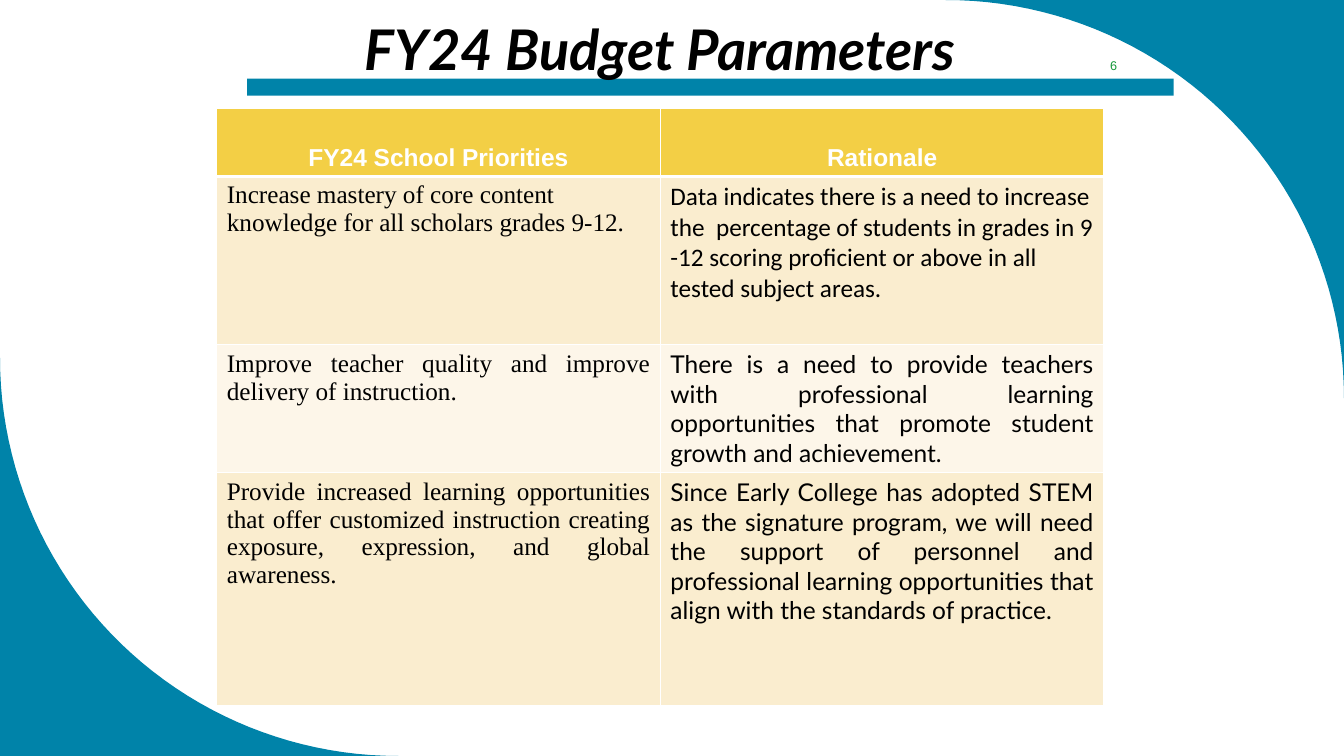
import math

import pptx
import pptx.dml.color
import pptx.enum.shapes
import pptx.enum.text
import pptx.oxml
import pptx.oxml.ns
import pptx.util

Inches = pptx.util.Inches
Pt = pptx.util.Pt
RGBColor = pptx.dml.color.RGBColor
ALIGN = pptx.enum.text.PP_ALIGN
ANCHOR = pptx.enum.text.MSO_ANCHOR

WIDTH, HEIGHT = 13.33, 7.5
TEAL = RGBColor(0x00, 0x83, 0xA9)
GOLD = RGBColor(0xF3, 0xCF, 0x45)
CREAM = RGBColor(0xFA, 0xED, 0xCF)
IVORY = RGBColor(0xFD, 0xF6, 0xE9)
GREEN = RGBColor(0x15, 0x98, 0x39)
BLACK = RGBColor(0, 0, 0)
WHITE = RGBColor(0xFF, 0xFF, 0xFF)

HEADINGS = ("FY24 School Priorities", "Rationale")
# Each row: priority, its alignment, rationale, its font and size
PRIORITIES = (
    ("Increase mastery of core content knowledge for all scholars grades 9-12.",
     ALIGN.LEFT,
     "Data indicates there is a need to increase the  percentage of students in "
     "grades in 9 -12 scoring proficient or above in all tested subject areas.",
     "Calibri", 18),
    ("Improve teacher quality and improve delivery of instruction.",
     ALIGN.JUSTIFY,
     "There is a need to provide teachers with professional learning "
     "opportunities that promote student growth and achievement.",
     "Lato", 17.5),
    ("Provide increased learning opportunities that offer customized instruction "
     "creating exposure, expression, and global awareness.",
     ALIGN.JUSTIFY,
     "Since Early College has adopted STEM as the signature program, we will need "
     "the support of personnel and professional learning opportunities that align "
     "with the standards of practice.",
     "Lato", 17.5),
)
ROW_HEIGHTS = (0.67, 1.67, 1.27, 2.31)


def write_text(frame, text, font="Arial", size=18, color=BLACK, bold=False,
               italic=False, align=ALIGN.LEFT):
    para = frame.paragraphs[0]
    para.alignment = align
    span = para.add_run()
    span.text = text
    span.font.name = font
    span.font.size = Pt(size)
    span.font.color.rgb = color
    span.font.bold = bold
    span.font.italic = italic


def paint(shape, color):
    shape.shadow.inherit = False
    shape.fill.solid()
    shape.fill.fore_color.rgb = color
    shape.line.fill.background()


def add_corner(page, left, top, size, start):
    """Fill the corner outside a quarter circle that begins at start degrees."""
    center_x = left if start == 270 else left + size
    center_y = top + size if start == 270 else top
    angles = [math.radians(start + step) for step in range(0, 91, 2)]
    arc = [(Inches(center_x + size * math.cos(angle)),
            Inches(center_y + size * math.sin(angle))) for angle in angles]
    corner = (left + size, top) if start == 270 else (left, top + size)
    builder = page.shapes.build_freeform(*arc[0])
    builder.add_line_segments(arc[1:] + [tuple(map(Inches, corner))], close=True)
    paint(builder.convert_to_shape(), TEAL)


def add_heading(page, left, top, width, height):
    # Rule below the title
    rule = page.shapes.add_shape(pptx.enum.shapes.MSO_SHAPE.RECTANGLE, Inches(2.45),
                                 Inches(0.78), Inches(9.19), Inches(0.17))
    paint(rule, TEAL)
    # Title, brought in front of the rule
    title = page.shapes.title
    title.left, title.top = Inches(left), Inches(top)
    title.width, title.height = Inches(width), Inches(height)
    rule._element.addnext(title._element)
    title.text_frame.vertical_anchor = ANCHOR.TOP
    title.text_frame.auto_size = pptx.enum.text.MSO_AUTO_SIZE.NONE
    write_text(title.text_frame, "FY24 Budget Parameters", font="Lato", size=40,
               bold=True, italic=True, align=ALIGN.CENTER)


def style_cell(cell, fill, top_line=1, bottom_line=1):
    cell.fill.solid()
    cell.fill.fore_color.rgb = fill
    properties = cell._tc.get_or_add_tcPr()
    lines = (("lnL", 1), ("lnR", 1), ("lnT", top_line), ("lnB", bottom_line))
    for index, (side, points) in enumerate(lines):
        properties.insert(index, pptx.oxml.parse_xml(
            f'<a:{side} {pptx.oxml.ns.nsdecls("a")} w="{Pt(points)}">'
            f'<a:solidFill><a:srgbClr val="{WHITE}"/></a:solidFill></a:{side}>'))


def add_priorities(page, left, top, width, height):
    table = page.shapes.add_table(len(ROW_HEIGHTS), len(HEADINGS), Inches(left),
                                  Inches(top), Inches(width), Inches(height)).table
    for row, row_height in zip(table.rows, ROW_HEIGHTS):
        row.height = Inches(row_height)
    # Header row
    for column, heading in enumerate(HEADINGS):
        cell = table.cell(0, column)
        style_cell(cell, GOLD, bottom_line=3)
        cell.vertical_anchor = ANCHOR.BOTTOM
        write_text(cell.text_frame, heading, size=17.5, color=WHITE, bold=True,
                   align=ALIGN.CENTER)
    # Banded body rows
    for row, (priority, align, rationale, font, size) in enumerate(PRIORITIES, 1):
        for column in range(len(HEADINGS)):
            style_cell(table.cell(row, column), CREAM if row % 2 else IVORY,
                       top_line=3 if row == 1 else 1)
        write_text(table.cell(row, 0).text_frame, priority, font="Times New Roman",
                   align=align)
        write_text(table.cell(row, 1).text_frame, rationale, font=font, size=size,
                   align=align)


def add_page_number(page, left, top, width, height):
    box = page.shapes.add_textbox(Inches(left), Inches(top), Inches(width),
                                  Inches(height))
    box.text_frame.word_wrap = True
    box.text_frame.vertical_anchor = ANCHOR.MIDDLE
    write_text(box.text_frame, "6", size=9, color=GREEN, align=ALIGN.CENTER)


def main():
    deck = pptx.Presentation()
    deck.slide_width, deck.slide_height = Inches(WIDTH), Inches(HEIGHT)
    page = deck.slides.add_slide(deck.slide_layouts[5])
    radius = 3.95
    add_corner(page, WIDTH - radius, 0, radius, start=270)
    add_corner(page, 0, HEIGHT - radius, radius, start=90)
    add_heading(page, 3.05, 0.09, 6.99, 0.77)
    add_priorities(page, 2.15, 1.08, 8.8, sum(ROW_HEIGHTS))
    add_page_number(page, 10.64, 0.5, 0.81, 0.3)
    deck.save("out.pptx")


if __name__ == "__main__":
    main()
